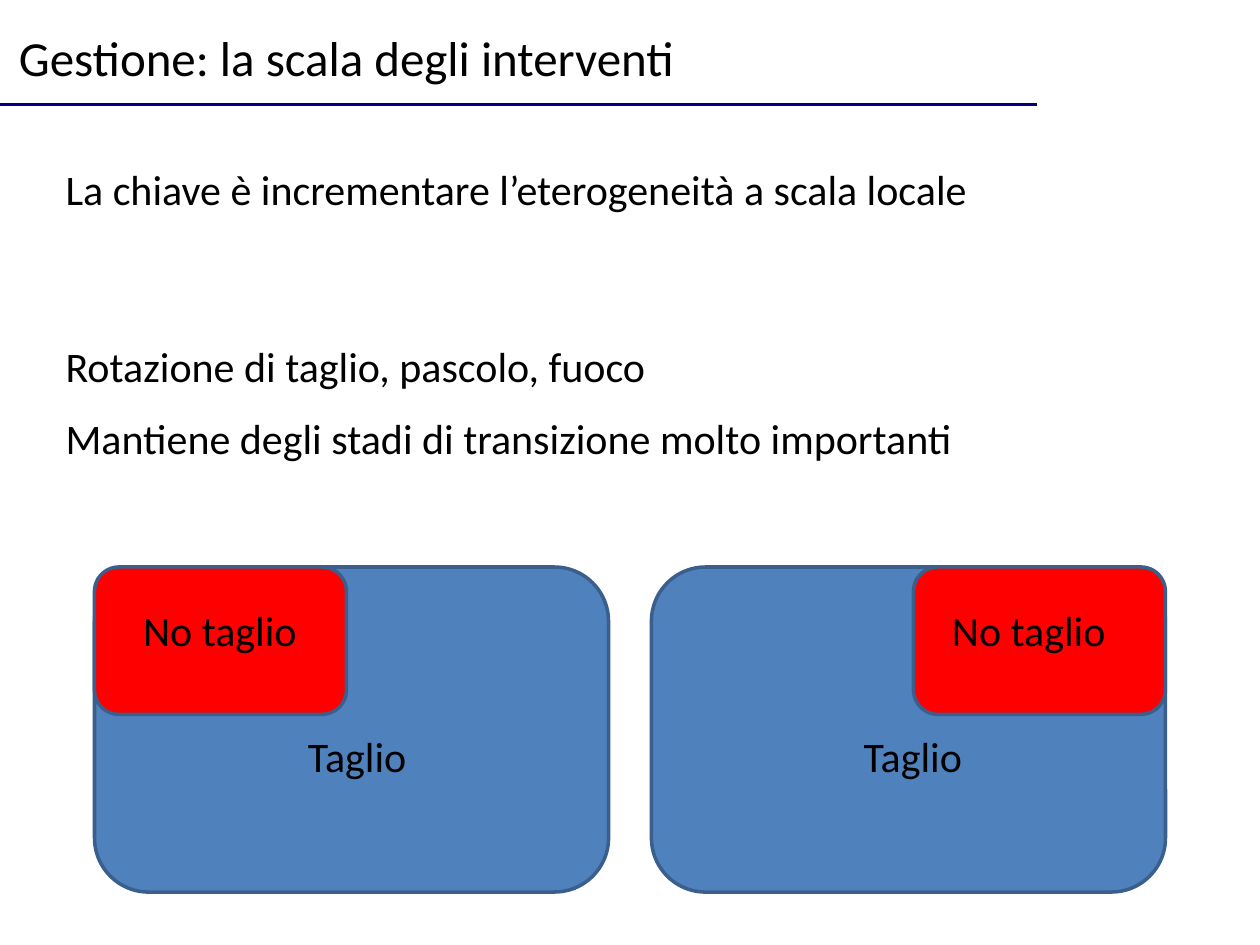
from dataclasses import dataclass

from lxml import etree
from pptx import Presentation
from pptx import util as u
from pptx.dml.color import RGBColor
from pptx.enum import shapes, text
from pptx.oxml.ns import qn


@dataclass(frozen=True)
class Theme:
    font: str = "Calibri"
    title_size: int = 28
    body_size: int = 24
    ink: str = "000000"
    rule: str = "000080"
    cut: str = "4F81BD"
    uncut: str = "FF0000"
    outline: str = "3A5F8C"
    line_width: int = 2


THEME = Theme()
COLUMNS, ROWS = 120, 90  # grid cells of 1/12 inch
PANEL_TOP, PANEL_WIDTH, PANEL_HEIGHT = 54, 49, 31
CORNER_WIDTH, CORNER_HEIGHT = 24, 14
LABEL_WIDTH, LABEL_HEIGHT = 22, 6


def cells(*counts):
    return [u.Inches(round(count / 12, 2)) for count in counts]


def place(box, left, top, width, height):
    box.left, box.top, box.width, box.height = cells(left, top, width, height)


def style_text(frame, size, align=text.PP_ALIGN.LEFT):
    frame.auto_size = text.MSO_AUTO_SIZE.NONE
    frame.vertical_anchor = text.MSO_ANCHOR.TOP
    for para in frame.paragraphs:
        para.alignment = align
        para.space_before = u.Pt(0)
        for span in para.runs:
            span.font.name = THEME.font
            span.font.size = u.Pt(size)
            span.font.color.rgb = RGBColor.from_string(THEME.ink)


def add_rule(page, row, length):
    left, top, right = cells(0, row, length)
    rule = page.shapes.add_connector(
        shapes.MSO_CONNECTOR.STRAIGHT, left, top, right, top)
    rule.line.color.rgb = RGBColor.from_string(THEME.rule)
    rule.line.width = u.Pt(THEME.line_width)
    etree.SubElement(rule._element.spPr, qn("a:effectLst"))


def set_title(page, wording):
    title = page.shapes.title
    place(title, 0.6, 2, 65.5, 6.8)
    title.text_frame.text = wording
    title.text_frame.word_wrap = False
    style_text(title.text_frame, THEME.title_size)


def set_body(page, lines):
    """Fill the body with (wording, points of space above) pairs."""
    body = page.placeholders[1]
    place(body, 5, 15, 95, 30)
    frame = body.text_frame
    frame.text = "\n".join(wording for wording, _ in lines)
    style_text(frame, THEME.body_size)
    for para, (_, gap) in zip(frame.paragraphs, lines):
        para.space_before = u.Pt(gap)
        # Hanging indent without a bullet
        properties = para._p.get_or_add_pPr()
        properties.set("marL", str(u.Inches(0.5)))
        properties.set("indent", str(-u.Inches(0.5)))
        etree.SubElement(properties, qn("a:buNone"))


def add_area(page, left, top, width, height, fill):
    area = page.shapes.add_shape(
        shapes.MSO_SHAPE.ROUNDED_RECTANGLE, *cells(left, top, width, height))
    area.shadow.inherit = False
    area.fill.solid()
    area.fill.fore_color.rgb = RGBColor.from_string(fill)
    area.line.color.rgb = RGBColor.from_string(THEME.outline)
    area.line.width = u.Pt(THEME.line_width)


def add_label(page, left, top, wording):
    label = page.shapes.add_textbox(*cells(left, top, LABEL_WIDTH, LABEL_HEIGHT))
    label.text_frame.text = wording
    label.text_frame.word_wrap = True
    style_text(label.text_frame, THEME.body_size, text.PP_ALIGN.CENTER)


def add_panel(page, left, corner_left, corner_label_left):
    """A cut meadow with an uncut patch in one upper corner."""
    add_area(page, left, PANEL_TOP, PANEL_WIDTH, PANEL_HEIGHT, THEME.cut)
    add_area(page, corner_left, PANEL_TOP, CORNER_WIDTH, CORNER_HEIGHT, THEME.uncut)
    add_label(page, left + 14, PANEL_TOP + 15, "Taglio")
    add_label(page, corner_label_left, PANEL_TOP + 3, "No taglio")


def main():
    deck = Presentation()
    deck.slide_width, deck.slide_height = cells(COLUMNS, ROWS)
    page = deck.slides.add_slide(deck.slide_layouts[1])

    # Heading
    add_rule(page, 10, 98.8)
    set_title(page, "Gestione: la scala degli interventi")

    # Key points
    set_body(page, [
        ("La chiave è incrementare l’eterogeneità a scala locale", 0),
        ("Rotazione di taglio, pascolo, fuoco", 72),
        ("Mantiene degli stadi di transizione molto importanti", 12.5),
    ])

    # Mirrored panels: the uncut corner moves from left to right
    left, right = 9, COLUMNS - 9 - PANEL_WIDTH
    corner_right = right + PANEL_WIDTH - CORNER_WIDTH
    add_panel(page, left, left, left + 1)
    add_panel(page, right, corner_right, corner_right)

    deck.save("out.pptx")


if __name__ == "__main__":
    main()
